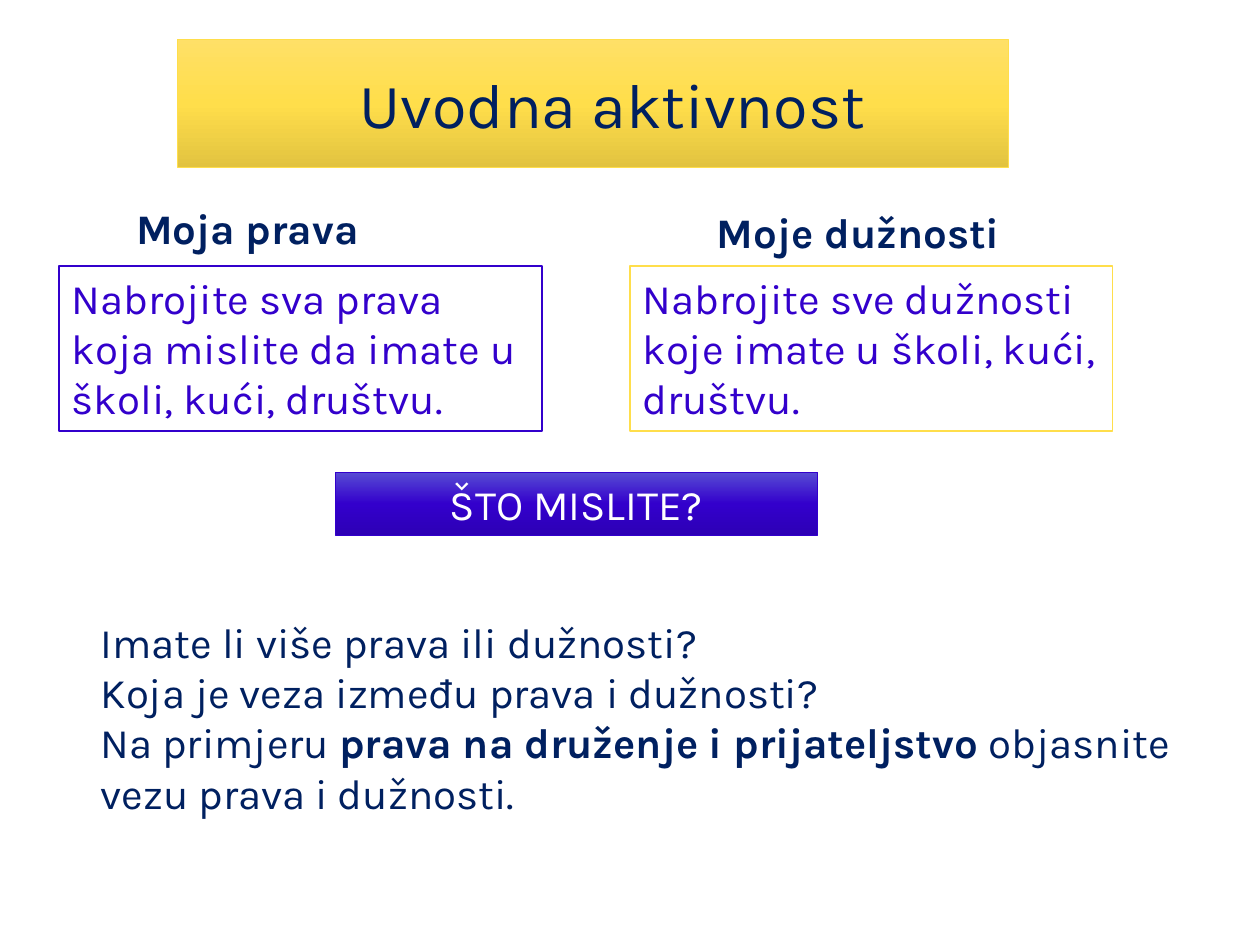
from copy import deepcopy
from dataclasses import dataclass

from pptx import Presentation
from pptx.dml.color import RGBColor
from pptx.enum.shapes import MSO_SHAPE
from pptx.enum.text import MSO_ANCHOR as Anchor, MSO_AUTO_SIZE as AutoSize, PP_ALIGN as Align
from pptx.oxml.ns import qn
from pptx.util import Inches, Pt


@dataclass(frozen=True)
class Theme:
    font: str = "Karla"
    navy: str = "002060"
    violet: str = "3300CC"
    yellow: str = "FFDE4B"
    white: str = "FFFFFF"
    yellow_fade: tuple = ("FFE067", "FFDE4B", "E2C340")
    violet_fade: tuple = ("574BD3", "3300CC", "2D00B5")
    title_size: int = 36
    body_size: int = 24


THEME = Theme()


def rgb(value):
    return RGBColor.from_string(value)


def write(sp, paragraphs, color, size=THEME.body_size, align=Align.LEFT,
          anchor=Anchor.TOP, left_inset=0.1, grow=True):
    """Fill a shape with paragraphs, each a list of (text, bold) runs."""
    tf = sp.text_frame
    frame_format = {
        "word_wrap": True,
        "auto_size": AutoSize.SHAPE_TO_FIT_TEXT if grow else AutoSize.NONE,
        "vertical_anchor": anchor,
        "margin_left": Inches(left_inset),
        "margin_right": Inches(0.1),
        "margin_top": Inches(0.05),
        "margin_bottom": Inches(0.05),
    }
    for name, value in frame_format.items():
        setattr(tf, name, value)
    for i, runs in enumerate(paragraphs):
        p = tf.add_paragraph() if i else tf.paragraphs[0]
        p.alignment = align
        for text, bold in runs:
            r = p.add_run()
            r.text = text
            for name, value in {"name": THEME.font, "size": Pt(size), "bold": bold}.items():
                setattr(r.font, name, value)
            r.font.color.rgb = rgb(color)


def fade(sp, colors):
    """Fill from top to bottom with three evenly spaced colours."""
    sp.fill.gradient()
    sp.fill.gradient_angle = 270
    stop_list = sp._element.spPr.find(qn("a:gradFill")).find(qn("a:gsLst"))
    stop_list.insert(1, deepcopy(stop_list[0]))
    for stop, position, color in zip(sp.fill.gradient_stops, (0, 0.5, 1), colors):
        stop.position = position
        stop.color.rgb = rgb(color)


def add_box(slide, box, line, line_width, colors=None):
    sp = slide.shapes.add_shape(MSO_SHAPE.RECTANGLE, *map(Inches, box))
    sp.shadow.inherit = False
    if colors:
        fade(sp, colors)
    else:
        sp.fill.solid()
        sp.fill.fore_color.rgb = rgb(THEME.white)
    sp.line.color.rgb = rgb(line)
    sp.line.width = Pt(line_width)
    return sp


def add_text(slide, box, paragraphs, **text_format):
    sp = slide.shapes.add_textbox(*map(Inches, box))
    write(sp, paragraphs, THEME.navy, **text_format)


def add_title(slide, text):
    sp = add_box(slide, (1.41, 0.31, 6.59, 1.02), THEME.yellow, 0.5, THEME.yellow_fade)
    write(sp, [[(text, False)]], THEME.navy, THEME.title_size, Align.CENTER,
          Anchor.MIDDLE, left_inset=0.41, grow=False)


def add_heading(slide, box, text):
    add_text(slide, box, [[(text, True)]], anchor=Anchor.BOTTOM, left_inset=0.61, grow=False)


def add_task(slide, left, text, line):
    sp = add_box(slide, (left, 2.11, 3.83, 1.31), line, 1)
    write(sp, [[(text, False)]], THEME.violet)


def add_banner(slide, text):
    sp = add_box(slide, (2.66, 3.75, 3.83, 0.5), THEME.violet, 0.5, THEME.violet_fade)
    write(sp, [[(text, False)]], THEME.white, align=Align.CENTER)


def main():
    prs = Presentation()
    prs.slide_width, prs.slide_height = Inches(10), Inches(7.5)
    s = prs.slides.add_slide(prs.slide_layouts[6])

    add_title(s, "Uvodna aktivnost")
    add_heading(s, (0.47, 1.41, 4.42, 0.65), "Moja prava")
    add_heading(s, (5.08, 1.41, 4.42, 0.68), "Moje dužnosti")
    add_text(s, (0.7, 4.84, 8.83, 1.72), [
        [("Imate li više prava ili dužnosti?", False)],
        [("Koja je veza između prava i dužnosti?", False)],
        [("Na primjeru ", False), ("prava na druženje i prijateljstvo ", True),
         ("objasnite vezu prava i dužnosti.", False)],
    ])
    add_task(s, 0.47, "Nabrojite sva prava koja mislite da imate u školi, kući, društvu.",
             THEME.violet)
    add_task(s, 5, "Nabrojite sve dužnosti koje imate u školi, kući, društvu.", THEME.yellow)
    add_banner(s, "ŠTO MISLITE?")

    prs.save("out.pptx")


if __name__ == "__main__":
    main()
